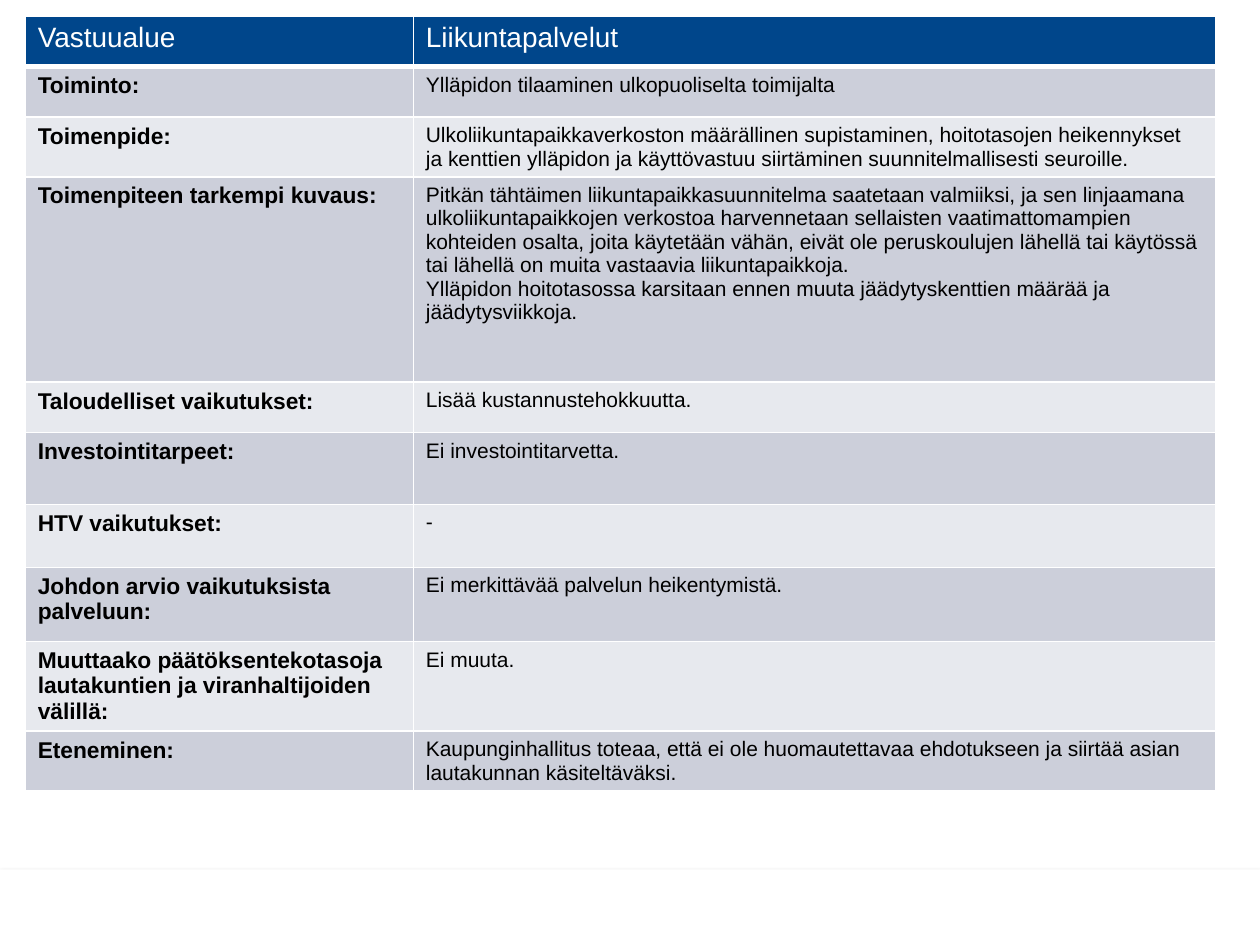
from dataclasses import dataclass

from lxml.etree import SubElement
from pptx import Presentation
from pptx.dml.color import RGBColor
from pptx.enum.shapes import MSO_SHAPE
from pptx.oxml.ns import qn
from pptx.util import Inches, Pt


@dataclass(frozen=True)
class Theme:
    font: str = "Arial"
    white: str = "FFFFFF"
    black: str = "000000"
    header: str = "00468B"
    bands: tuple = ("CCCFDA", "E7E9EE")
    header_size: float = 16
    label_size: float = 13
    body_size: float = 12
    border: float = 1
    header_rule: float = 3


COLUMN_WIDTHS = (3.08, 6.37)
HEADINGS = ("Vastuualue", "Liikuntapalvelut")
HEADER_HEIGHT = 0.4

# Row height, label, paragraphs of the description
MEASURE_ROWS = [
    (0.4, "Toiminto:", ["Ylläpidon tilaaminen ulkopuoliselta toimijalta"]),
    (0.47, "Toimenpide:", [
        "Ulkoliikuntapaikkaverkoston määrällinen supistaminen, hoitotasojen "
        "heikennykset ja kenttien ylläpidon ja käyttövastuu siirtäminen "
        "suunnitelmallisesti seuroille."]),
    (1.63, "Toimenpiteen tarkempi kuvaus:", [
        "Pitkän tähtäimen liikuntapaikkasuunnitelma saatetaan valmiiksi, ja sen "
        "linjaamana ulkoliikuntapaikkojen verkostoa harvennetaan sellaisten "
        "vaatimattomampien kohteiden osalta, joita käytetään vähän, eivät ole "
        "peruskoulujen lähellä tai käytössä tai lähellä on muita vastaavia "
        "liikuntapaikkoja.",
        "Ylläpidon hoitotasossa karsitaan ennen muuta jäädytyskenttien määrää "
        "ja jäädytysviikkoja."]),
    (0.4, "Taloudelliset vaikutukset:", ["Lisää kustannustehokkuutta."]),
    (0.57, "Investointitarpeet:", ["Ei investointitarvetta."]),
    (0.5, "HTV vaikutukset:", ["-"]),
    (0.59, "Johdon arvio vaikutuksista palveluun:",
     ["Ei merkittävää palvelun heikentymistä."]),
    (0.71, "Muuttaako päätöksentekotasoja lautakuntien ja viranhaltijoiden "
           "välillä:", ["Ei muuta."]),
    (0.47, "Eteneminen:", [
        "Kaupunginhallitus toteaa, että ei ole huomautettavaa ehdotukseen ja "
        "siirtää asian lautakunnan käsiteltäväksi."]),
]


class SlideBuilder:
    def __init__(self, slide, theme):
        self.slide = slide
        self.theme = theme

    def footer_band(self, left, top, width, height):
        """Add a white band with a soft shadow along its edge."""
        band = self.slide.shapes.add_shape(
            MSO_SHAPE.RECTANGLE, Inches(left), Inches(top), Inches(width), Inches(height))
        band.shadow.inherit = False
        band.fill.solid()
        band.fill.fore_color.rgb = RGBColor.from_string(self.theme.white)
        band.line.fill.background()
        effects = band.fill._xPr.find(qn("a:effectLst"))
        shadow = SubElement(effects, qn("a:outerShdw"), blurRad=str(Pt(3.1)),
                            dist=str(Pt(1.8)), dir=str(90 * 60000), rotWithShape="0")
        color = SubElement(shadow, qn("a:srgbClr"), val=self.theme.black)
        SubElement(color, qn("a:alpha"), val="35000")

    def table(self, left, top, widths, heights):
        frame = self.slide.shapes.add_table(
            len(heights), len(widths), Inches(left), Inches(top),
            Inches(sum(widths)), Inches(sum(heights)))
        for column, width in zip(frame.table.columns, widths):
            column.width = Inches(width)
        for row, height in zip(frame.table.rows, heights):
            row.height = Inches(height)
        return frame.table

    def cell(self, cell, paragraphs, size, color, fill, bold=False,
             top_rule=None, bottom_rule=None):
        border = self.theme.border
        self.cell_borders(cell, L=border, R=border,
                          T=top_rule or border, B=bottom_rule or border)
        cell.fill.solid()
        cell.fill.fore_color.rgb = RGBColor.from_string(fill)
        for index, text in enumerate(paragraphs):
            frame = cell.text_frame
            paragraph = frame.add_paragraph() if index else frame.paragraphs[0]
            run = paragraph.add_run()
            run.text = text
            run.font.name = self.theme.font
            run.font.size = Pt(size)
            run.font.bold = bold
            run.font.color.rgb = RGBColor.from_string(color)

    def cell_borders(self, cell, **widths):
        properties = cell._tc.get_or_add_tcPr()
        for side, width in widths.items():
            line = SubElement(properties, qn(f"a:ln{side}"), w=str(Pt(width)))
            fill = SubElement(line, qn("a:solidFill"))
            SubElement(fill, qn("a:srgbClr"), val=self.theme.white)


def main():
    presentation = Presentation()
    presentation.slide_width = Inches(10)
    presentation.slide_height = Inches(7.5)
    theme = Theme()
    slide = presentation.slides.add_slide(presentation.slide_layouts[6])
    builder = SlideBuilder(slide, theme)

    builder.footer_band(0, 6.9, 10, 0.6)
    heights = [HEADER_HEIGHT] + [height for height, _, _ in MEASURE_ROWS]
    measures = builder.table(0.2, 0.13, COLUMN_WIDTHS, heights)
    for column, heading in enumerate(HEADINGS):
        builder.cell(measures.cell(0, column), [heading], theme.header_size,
                     theme.white, theme.header, bottom_rule=theme.header_rule)
    for row, (_, label, description) in enumerate(MEASURE_ROWS, start=1):
        band = theme.bands[(row - 1) % 2]
        top_rule = theme.header_rule if row == 1 else None
        builder.cell(measures.cell(row, 0), [label], theme.label_size,
                     theme.black, band, bold=True, top_rule=top_rule)
        builder.cell(measures.cell(row, 1), description, theme.body_size,
                     theme.black, band, top_rule=top_rule)

    presentation.save("out.pptx")


if __name__ == "__main__":
    main()
